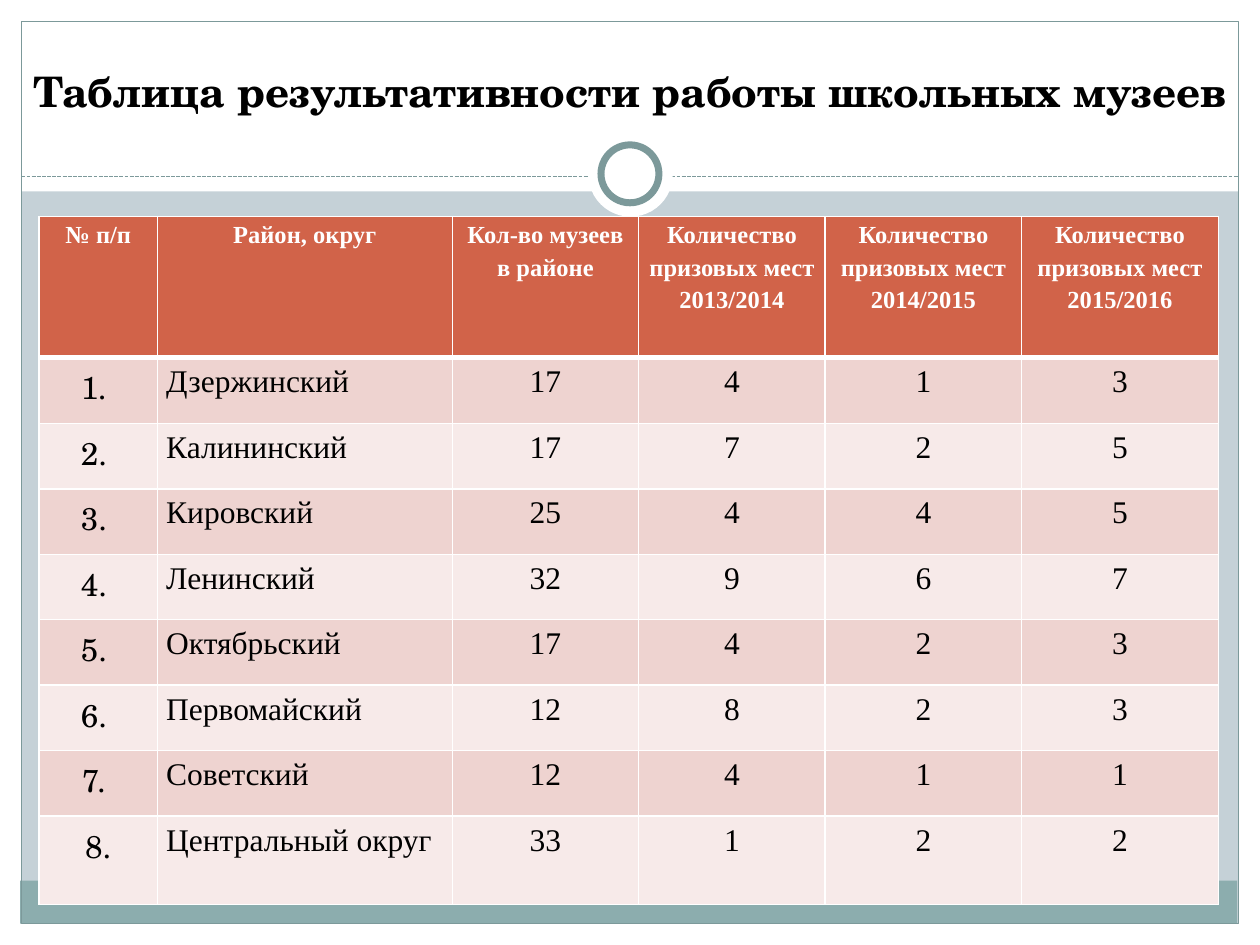
from lxml.etree import SubElement
from pptx import Presentation
from pptx.dml.color import RGBColor
from pptx.enum.dml import MSO_LINE
from pptx.enum.shapes import MSO_CONNECTOR, MSO_SHAPE
from pptx.enum.text import PP_ALIGN
from pptx.oxml import parse_xml
from pptx.oxml.ns import nsdecls, qn
from pptx.util import Inches, Pt

TITLE = "Таблица результативности работы школьных музеев"
HEADER = [
    "№ п/п", "Район, округ", "Кол-во музеев в районе",
    "Количество призовых мест\n2013/2014",
    "Количество призовых мест\n2014/2015",
    "Количество призовых мест\n2015/2016",
]
ROWS = [
    ("1. ", "Дзержинский", 17, 4, 1, 3),
    ("2. ", "Калининский", 17, 7, 2, 5),
    ("3. ", "Кировский", 25, 4, 4, 5),
    ("4. ", "Ленинский", 32, 9, 6, 7),
    ("5. ", "Октябрьский", 17, 4, 2, 3),
    ("6. ", "Первомайский", 12, 8, 2, 3),
    ("7. ", "Советский", 12, 4, 1, 1),
    ("8.", "Центральный округ", 33, 1, 2, 2),
]
COL_WIDTHS = [0.94, 2.34, 1.48, 1.48, 1.56, 1.56]
ROW_HEIGHTS = [1.12] + [0.52] * 7 + [0.7]

SERIF, SCHOOL = "Times New Roman", "TeX Gyre Schola"
WHITE, BLACK, TEAL = "FFFFFF", "000000", "7C999A"
BACKGROUND, FOOTER, HEAD_FILL = "C5D1D7", "8CADAE", "D16349"
BANDS = ["EED3D0", "F7EAE9"]

# shape, (left, top, width, height), fill, line width
RECT, OVAL = MSO_SHAPE.RECTANGLE, MSO_SHAPE.OVAL
FRAME = [
    (RECT, (0, 7.33, 10, 0.17), WHITE, None),
    (RECT, (0, 0, 10, 1.52), WHITE, None),
    (RECT, (0, 0, 0.17, 7.5), WHITE, None),
    (RECT, (9.83, 0, 0.17, 7.5), WHITE, None),
    (RECT, (0.16, 6.99, 9.66, 0.34), FOOTER, None),
    (RECT, (0.17, 0.17, 9.66, 7.16), None, 0.75),
]
RING = [
    (OVAL, (4.67, 1.05, 0.67, 0.67), WHITE, None),
    (OVAL, (4.77, 1.15, 0.46, 0.46), WHITE, 4),
]


def rgb(color):
    return RGBColor.from_string(color)


def paint(fill, color):
    fill.solid()
    fill.fore_color.rgb = rgb(color)


def add_shapes(slide, shapes):
    for kind, box, fill, line_width in shapes:
        sp = slide.shapes.add_shape(kind, *map(Inches, box))
        sp.shadow.inherit = False
        if fill:
            paint(sp.fill, fill)
        else:
            sp.fill.background()
        if line_width:
            paint(sp.line.fill, TEAL)
            sp.line.width = Pt(line_width)
        else:
            sp.line.fill.background()


def add_divider(slide):
    line = slide.shapes.add_connector(
        MSO_CONNECTOR.STRAIGHT, *map(Inches, (0.17, 1.4, 9.83, 1.4)))
    paint(line.line.fill, TEAL)
    line.line.width = Pt(0.75)
    line.line.dash_style = MSO_LINE.SQUARE_DOT
    SubElement(line.element.spPr, qn("a:effectLst"))


def style_text(tf, font, size, color, bold, align, spacing=None):
    for p in tf.paragraphs:
        p.alignment = align
        if spacing:
            p.line_spacing = spacing
        for r in p.runs:
            r.font.name, r.font.size, r.font.bold = font, Pt(size), bold
            r.font.color.rgb = rgb(color)


def add_borders(cell, widths):
    """Draw white borders; widths maps a side (L, R, T, B) to points."""
    tc_pr = cell._tc.get_or_add_tcPr()
    for i, (side, width) in enumerate(widths.items()):
        tc_pr.insert(i, parse_xml(
            f'<a:ln{side} {nsdecls("a")} w="{Pt(width)}"><a:solidFill>'
            f'<a:srgbClr val="{WHITE}"/></a:solidFill></a:ln{side}>'))


def fill_cell(cell, row, col, value):
    head = row == 0
    numbering = col == 0 and not head
    cell.text_frame.text = str(value)
    if not numbering:
        cell.margin_left = cell.margin_right = Inches(0.07)
        cell.margin_top = cell.margin_bottom = 0
    style_text(
        cell.text_frame,
        font=SCHOOL if numbering else SERIF,
        size=14 if head else 18,
        color=WHITE if head else BLACK,
        bold=head,
        align=PP_ALIGN.JUSTIFY if col == 1 and not head else PP_ALIGN.CENTER,
        spacing=None if numbering else 1.2)
    paint(cell.fill, HEAD_FILL if head else BANDS[(row - 1) % 2])
    add_borders(cell, {"L": 1, "R": 1, "T": 3 if row == 1 else 1,
                       "B": 3 if head else 1})


def add_results(slide):
    data = [HEADER, *ROWS]
    table = slide.shapes.add_table(
        len(data), len(HEADER), Inches(0.31), Inches(1.72),
        Inches(sum(COL_WIDTHS)), Inches(sum(ROW_HEIGHTS))).table
    for column, width in zip(table.columns, COL_WIDTHS):
        column.width = Inches(width)
    for table_row, height in zip(table.rows, ROW_HEIGHTS):
        table_row.height = Inches(height)
    for row, values in enumerate(data):
        for col, value in enumerate(values):
            fill_cell(table.cell(row, col), row, col, value)


def add_title(slide):
    tf = slide.shapes.add_textbox(
        0, Inches(0.47), Inches(10), Inches(0.5)).text_frame
    tf.word_wrap = True
    tf.text = TITLE
    style_text(tf, SCHOOL, 24, BLACK, True, PP_ALIGN.CENTER)


def main():
    prs = Presentation()
    prs.slide_width, prs.slide_height = Inches(10), Inches(7.5)
    slide = prs.slides.add_slide(prs.slide_layouts[6])
    paint(slide.background.fill, BACKGROUND)
    add_shapes(slide, FRAME)
    add_divider(slide)
    add_shapes(slide, RING)
    add_results(slide)
    add_title(slide)
    prs.save("out.pptx")


if __name__ == "__main__":
    main()
